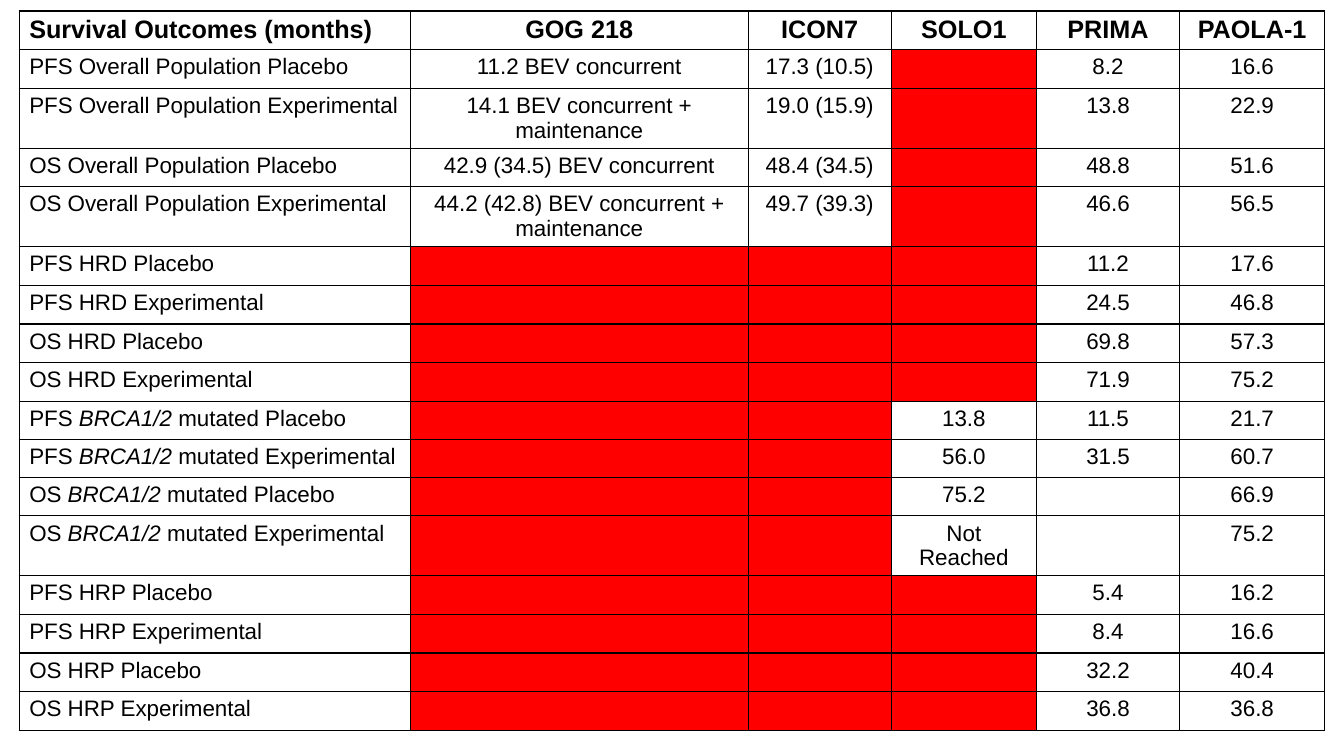
import pptx
import pptx.util
import pptx.dml.color
import pptx.enum.text
import pptx.oxml
import pptx.oxml.ns

COLOURS = {"text": "000000", "border": "000000", "reported": "FFFFFF", "not_studied": "FF0000"}
GENE = " BRCA1/2 "
TRIALS = ["Survival Outcomes (months)", "GOG 218", "ICON7", "SOLO1", "PRIMA", "PAOLA-1"]
COLUMN_WIDTHS = [3.88, 3.35, 1.42, 1.44, 1.42, 1.44]
ROW_HEIGHT = 4.6 / 12
WRAPPED_HEIGHT = 0.59
TIGHT_HEIGHT = 0.35
SPECIAL_HEIGHTS = {2: WRAPPED_HEIGHT, 4: WRAPPED_HEIGHT, 10: TIGHT_HEIGHT, 12: WRAPPED_HEIGHT}
X = None
OUTCOMES = [
    ["PFS Overall Population Placebo", "11.2 BEV concurrent", "17.3 (10.5)", X, "8.2", "16.6"],
    ["PFS Overall Population Experimental", "14.1 BEV concurrent + maintenance",
     "19.0 (15.9)", X, "13.8", "22.9"],
    ["OS Overall Population Placebo", "42.9 (34.5) BEV concurrent",
     "48.4 (34.5)", X, "48.8", "51.6"],
    ["OS Overall Population Experimental", "44.2 (42.8) BEV concurrent + maintenance",
     "49.7 (39.3)", X, "46.6", "56.5"],
    ["PFS HRD Placebo", X, X, X, "11.2", "17.6"],
    ["PFS HRD Experimental", X, X, X, "24.5", "46.8"],
    ["OS HRD Placebo", X, X, X, "69.8", "57.3"],
    ["OS HRD Experimental", X, X, X, "71.9", "75.2"],
    ["PFS BRCA1/2 mutated Placebo", X, X, "13.8", "11.5", "21.7"],
    ["PFS BRCA1/2 mutated Experimental", X, X, "56.0", "31.5", "60.7"],
    ["OS BRCA1/2 mutated Placebo", X, X, "75.2", "", "66.9"],
    ["OS BRCA1/2 mutated Experimental", X, X, "Not Reached", "", "75.2"],
    ["PFS HRP Placebo", X, X, X, "5.4", "16.2"],
    ["PFS HRP Experimental", X, X, X, "8.4", "16.6"],
    ["OS HRP Placebo", X, X, X, "32.2", "40.4"],
    ["OS HRP Experimental", X, X, X, "36.8", "36.8"],
]


class OutcomeSlide:
    """Holds the table style and the slide it is drawn on."""

    font = "Arial"
    header_size = 18
    body_size = 16
    border_width = 1

    def __init__(self, presentation):
        self.slide = presentation.slides.add_slide(presentation.slide_layouts[6])

    def colour(self, name):
        return pptx.dml.color.RGBColor.from_string(COLOURS[name])

    def add_borders(self, cell):
        properties = cell._tc.get_or_add_tcPr()
        for side in ("lnL", "lnR", "lnT", "lnB"):
            properties.append(pptx.oxml.parse_xml(
                f'<a:{side} {pptx.oxml.ns.nsdecls("a")} w="{pptx.util.Pt(self.border_width)}">'
                f'<a:solidFill><a:srgbClr val="{COLOURS["border"]}"/></a:solidFill></a:{side}>'))

    def add_wording(self, paragraph, wording, size, bold):
        paragraph._p.get_or_add_endParaRPr().set("sz", str(size * 100))
        for part in wording.partition(GENE):
            if part:
                run = paragraph.add_run()
                run.text = part
                run.font.name = self.font
                run.font.size = pptx.util.Pt(size)
                run.font.bold = bold
                run.font.italic = part == GENE
                run.font.color.rgb = self.colour("text")

    def add_cell(self, cell, wording, is_header, is_label):
        self.add_borders(cell)
        cell.fill.solid()
        cell.fill.fore_color.rgb = self.colour("not_studied" if wording is None else "reported")
        paragraph = cell.text_frame.paragraphs[0]
        align = pptx.enum.text.PP_ALIGN
        paragraph.alignment = align.LEFT if is_label else align.CENTER
        size = self.header_size if is_header else self.body_size
        self.add_wording(paragraph, wording or "", size, is_header)

    def add_table(self, left, top, widths, heights, rows):
        inches = pptx.util.Inches
        outcomes = self.slide.shapes.add_table(
            len(rows), len(widths), inches(left), inches(top),
            inches(sum(widths)), inches(sum(heights))).table
        outcomes.first_row = False
        outcomes.horz_banding = False
        for column, width in zip(outcomes.columns, widths):
            column.width = inches(width)
        for index, (row, height, wordings) in enumerate(zip(outcomes.rows, heights, rows)):
            row.height = inches(height)
            for position, (cell, wording) in enumerate(zip(row.cells, wordings)):
                self.add_cell(cell, wording, index == 0, position == 0)


def main():
    presentation = pptx.Presentation()
    presentation.slide_width = pptx.util.Inches(13.33)
    presentation.slide_height = pptx.util.Inches(7.5)
    rows = [TRIALS] + OUTCOMES
    heights = [SPECIAL_HEIGHTS.get(index, ROW_HEIGHT) for index in range(len(rows))]
    OutcomeSlide(presentation).add_table(0.19, 0.11, COLUMN_WIDTHS, heights, rows)
    presentation.save("out.pptx")


if __name__ == "__main__":
    main()
